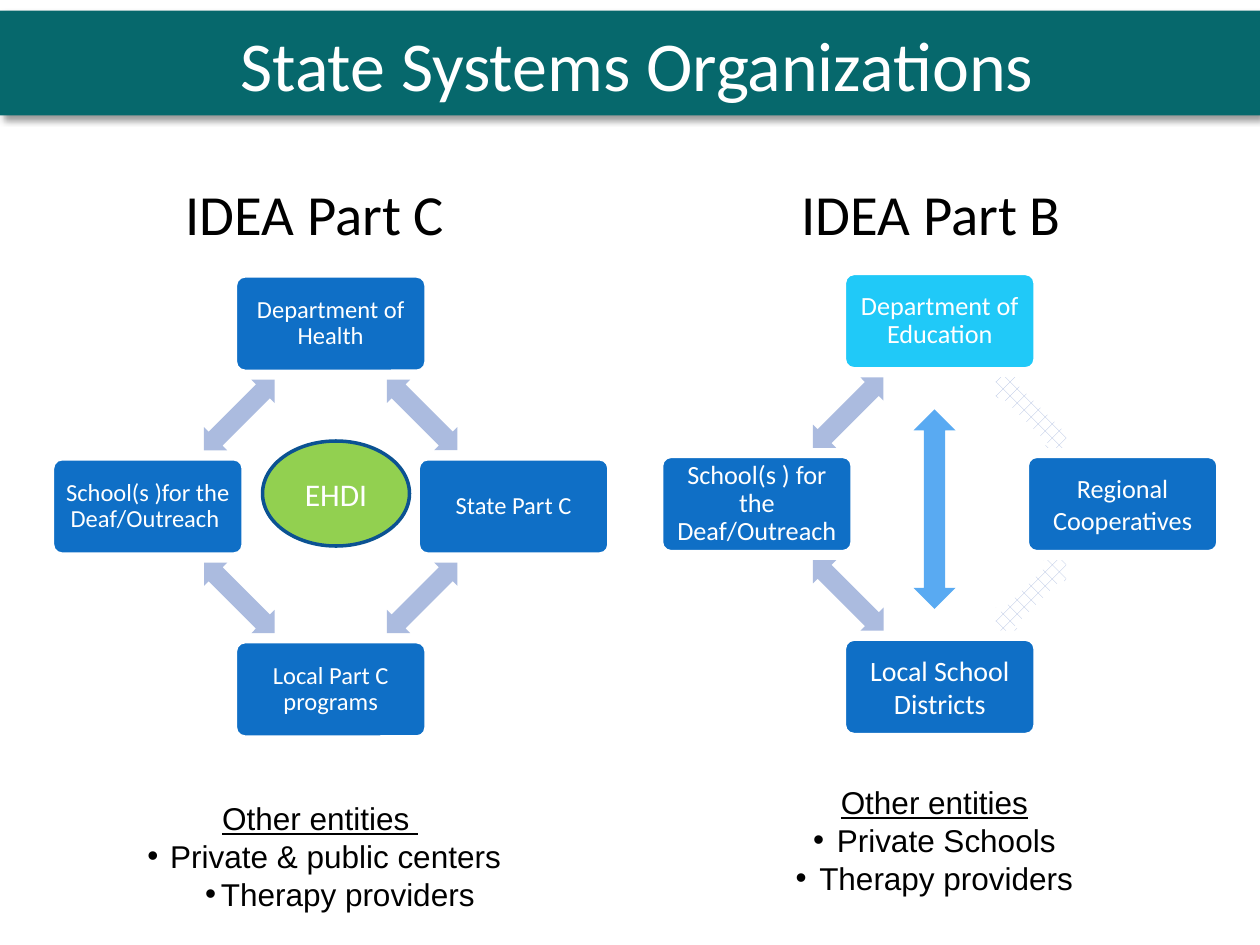
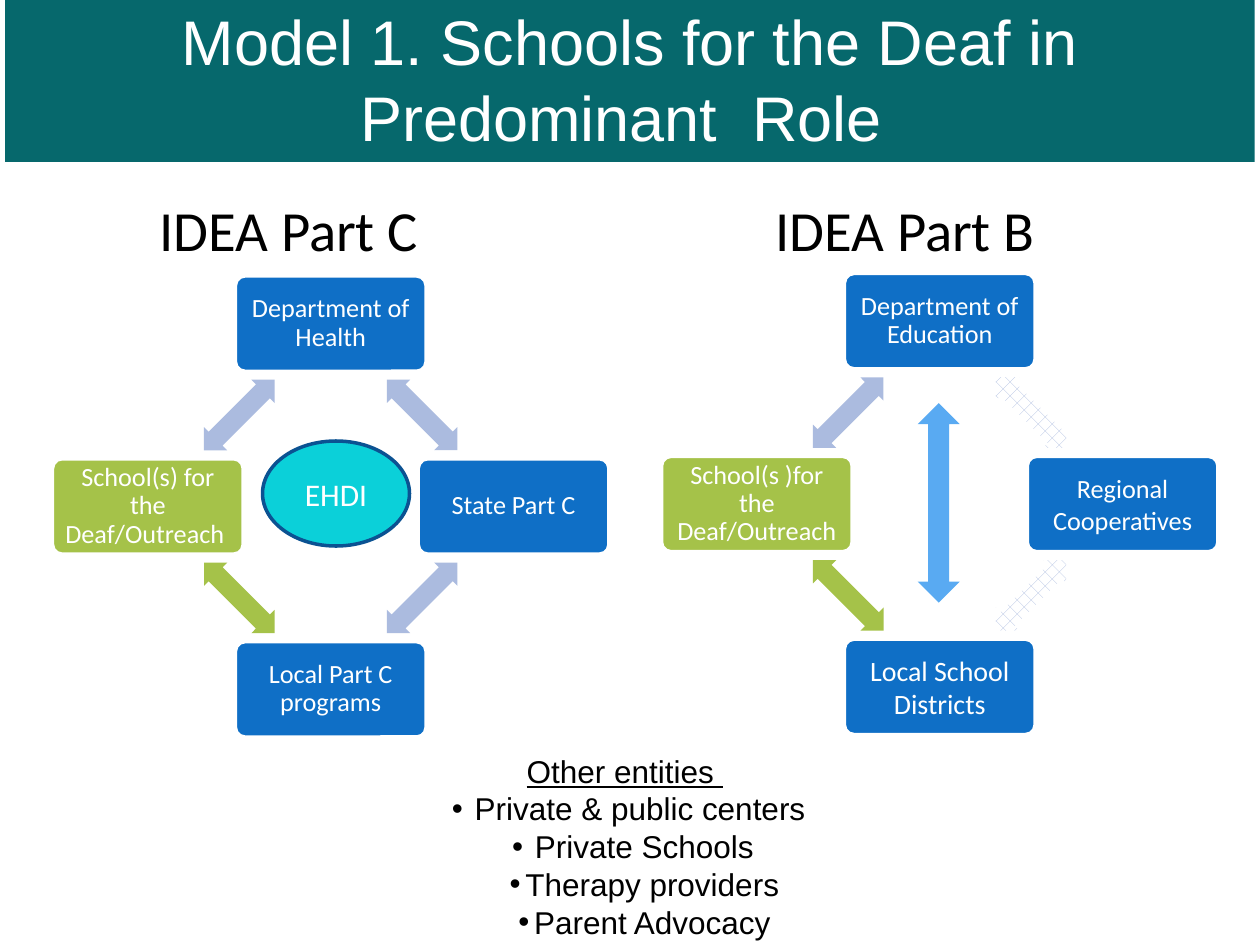
from math import cos, radians, sin, sqrt

from lxml import etree
from pptx import Presentation
from pptx.dml.color import RGBColor
from pptx.enum.dml import MSO_PATTERN
from pptx.enum.shapes import MSO_SHAPE
from pptx.enum.text import MSO_ANCHOR, MSO_AUTO_SIZE, PP_ALIGN
from pptx.oxml.ns import qn
from pptx.util import Pt

RECT, BOX, OVAL = MSO_SHAPE.RECTANGLE, MSO_SHAPE.ROUNDED_RECTANGLE, MSO_SHAPE.OVAL
TWO_WAY, UP_DOWN = MSO_SHAPE.LEFT_RIGHT_ARROW, MSO_SHAPE.UP_DOWN_ARROW
TOP, MIDDLE = MSO_ANCHOR.TOP, MSO_ANCHOR.MIDDLE
LEFT, CENTER = PP_ALIGN.LEFT, PP_ALIGN.CENTER
HATCH = MSO_PATTERN.PERCENT_25
NO_FIT = MSO_AUTO_SIZE.NONE

WHITE = RGBColor(0xFF, 0xFF, 0xFF)
BLACK = RGBColor(0, 0, 0)
TEAL = RGBColor(0x06, 0x68, 0x6C)
BLUE = RGBColor(0x0F, 0x6F, 0xC6)
CYAN = RGBColor(0x20, 0xC9, 0xF8)
TURQUOISE = RGBColor(0x0B, 0xD0, 0xD9)
OLIVE = RGBColor(0xA5, 0xC2, 0x49)
LIME = RGBColor(0x92, 0xD0, 0x50)
NAVY = RGBColor(0x0B, 0x52, 0x92)
SKY = RGBColor(0x59, 0xAA, 0xF2)
LAVENDER = RGBColor(0xAB, 0xBB, 0xDF)

PART_C_CENTER, PART_B_CENTER = (189, 289.4), (537, 288)
RING_RADIUS = 104.5
BOX_SIZE, ARROW_SIZE = (109, 54.5), (57, 18.8)
HEADINGS = "IDEA Part C \tIDEA Part B"
HEADING_TAB = 352

# Left margin and hanging indent of the bullet levels
EVEN, WIDE, DEEP = (13.5, 13.5), (22.5, 13), (31.5, 9)


def set_all(target, **values):
    for name, value in values.items():
        setattr(target, name, value)


class Deck:
    def __init__(self):
        self.prs = Presentation()
        set_all(self.prs, slide_width=Pt(720), slide_height=Pt(540))
        self.slide = None

    def new_slide(self, left, top, height):
        """Add a slide whose title carries both column headings."""
        self.slide = self.prs.slides.add_slide(self.prs.slide_layouts[5])
        title = self.slide.shapes.title
        set_all(title, left=Pt(left), top=Pt(top), width=Pt(570), height=Pt(height))
        tf = title.text_frame
        set_all(tf, auto_size=NO_FIT, vertical_anchor=MIDDLE, margin_left=Pt(16))
        p = tf.paragraphs[0]
        self.add_text(p, HEADINGS, 32.4, BLACK, align=LEFT)
        tabs = etree.SubElement(p._p.get_or_add_pPr(), qn("a:tabLst"))
        etree.SubElement(tabs, qn("a:tab"), pos=str(Pt(HEADING_TAB)), algn="l")

    def add_text(self, p, text, size, color=WHITE, font="Calibri", align=CENTER,
                 spacing=1.0, underline=None):
        set_all(p, alignment=align, line_spacing=spacing)
        r = p.add_run()
        r.text = text
        set_all(r.font, size=Pt(size), name=font, underline=underline)
        r.font.color.rgb = color

    def shape(self, kind, left, top, width, height, fill, line=None):
        sp = self.slide.shapes.add_shape(kind, Pt(left), Pt(top), Pt(width), Pt(height))
        sp.shadow.inherit = False
        if fill == HATCH:
            sp.fill.patterned()
            sp.fill.pattern = HATCH
            sp.fill.fore_color.rgb, sp.fill.back_color.rgb = LAVENDER, WHITE
        else:
            sp.fill.solid()
            sp.fill.fore_color.rgb = fill
        if line is None:
            sp.line.fill.background()
        else:
            sp.line.color.rgb = line
            sp.line.width = Pt(2)
        return sp

    def centered(self, kind, x, y, size, fill, line=None):
        width, height = size
        return self.shape(kind, x - width / 2, y - height / 2, width, height, fill, line)

    def band(self, text, left, top, width, height, size, font, anchor=MIDDLE, indent=7.2):
        sp = self.shape(RECT, left, top, width, height, TEAL)
        tf = sp.text_frame
        set_all(tf, word_wrap=True, vertical_anchor=anchor, margin_left=Pt(indent))
        self.add_text(tf.paragraphs[0], text, size, font=font)
        return sp

    def drop_shadow(self, sp):
        effects = sp._element.spPr.find(qn("a:effectLst"))
        shadow = etree.SubElement(effects, qn("a:outerShdw"), blurRad=str(Pt(4)),
                                  dist=str(Pt(3)), dir="2700000", rotWithShape="0")
        color = etree.SubElement(shadow, qn("a:srgbClr"), val=str(BLACK))
        etree.SubElement(color, qn("a:alpha"), val="40000")

    def box(self, x, y, text, size, fill=BLUE, spacing=0.9, inset=4.3):
        sp = self.centered(BOX, x, y, BOX_SIZE, fill, WHITE)
        sp.adjustments[0] = 0.1
        tf = sp.text_frame
        set_all(tf, word_wrap=True, vertical_anchor=MIDDLE)
        set_all(tf, **{f"margin_{side}": Pt(inset)
                       for side in ("left", "right", "top", "bottom")})
        for i, line in enumerate(text.split("\n")):
            p = tf.add_paragraph() if i else tf.paragraphs[0]
            self.add_text(p, line, size, spacing=spacing)

    def ring(self, center, boxes, arrow_fills):
        """Place four boxes clockwise from the top, each followed by a two-way arrow."""
        def around(angle, radius):
            a = radians(angle)
            return center[0] + radius * sin(a), center[1] - radius * cos(a)

        for i, (box, arrow_fill) in enumerate(zip(boxes, arrow_fills)):
            angle = 90 * i
            self.box(*around(angle, RING_RADIUS), **box)
            arrow = self.centered(TWO_WAY, *around(angle + 45, RING_RADIUS / sqrt(2)),
                                  ARROW_SIZE, arrow_fill)
            arrow.rotation = angle + 45
            arrow.adjustments[0] = 0.6

    def part_c(self, school, size, school_fill, arrow_fill, ehdi_fill):
        boxes = [dict(text="Department of Health", size=size),
                 dict(text="State Part C", size=size),
                 dict(text="Local Part C programs", size=size),
                 dict(text=school, size=size, fill=school_fill)]
        self.ring(PART_C_CENTER, boxes, [LAVENDER, LAVENDER, arrow_fill, LAVENDER])
        oval = self.shape(OVAL, 150, 252, 84, 60, ehdi_fill, NAVY)
        oval.text_frame.vertical_anchor = MIDDLE
        self.add_text(oval.text_frame.paragraphs[0], "EHDI", 18)

    def part_b(self, school, education_fill, school_fill, arrow_fill, link_at):
        boxes = [dict(text="Department of Education", size=15, fill=education_fill),
                 dict(text="Regional\nCooperatives", size=15, spacing=1.0, inset=3),
                 dict(text="Local School Districts", size=16, spacing=1.0, inset=5),
                 dict(text=school, size=15, fill=school_fill)]
        self.ring(PART_B_CENTER, boxes, [HATCH, HATCH, arrow_fill, LAVENDER])
        self.shape(UP_DOWN, *link_at, 24, 114, SKY)

    def entities(self, left, top, width, height, heading, items):
        tb = self.slide.shapes.add_textbox(Pt(left), Pt(top), Pt(width), Pt(height))
        tf = tb.text_frame
        tf.word_wrap = True
        self.add_text(tf.paragraphs[0], heading, 18, BLACK, "Arial", underline=True)
        for text, (margin, hanging) in items:
            p = tf.add_paragraph()
            self.add_text(p, text, 18, BLACK, "Arial")
            pPr = p._p.get_or_add_pPr()
            pPr.set("marL", str(Pt(margin)))
            pPr.set("indent", str(-Pt(hanging)))
            etree.SubElement(pPr, qn("a:buFont"), typeface="Arial")
            etree.SubElement(pPr, qn("a:buChar"), char="•")


def state_systems(deck):
    deck.new_slide(90, 97.5, 48)
    deck.part_c("School(s )for the Deaf/Outreach ", 14, BLUE, LAVENDER, LIME)
    deck.part_b("School(s ) for the Deaf/Outreach", CYAN, BLUE, LAVENDER, (522, 234))
    deck.entities(444, 444, 180, 72.7, "Other entities",
                  [("Private Schools", EVEN), ("Therapy providers", EVEN)])
    deck.entities(60, 453, 246, 72.7, "Other entities ",
                  [("Private & public centers ", WIDE), ("Therapy providers", DEEP)])
    band = deck.band("State Systems Organizations", 0, 6, 720, 60, 40, "Calibri", indent=15)
    deck.drop_shadow(band)


def schools_in_predominant_role(deck):
    deck.new_slide(75, 109.5, 42)
    deck.part_c("School(s) for the Deaf/Outreach ", 15, OLIVE, OLIVE, TURQUOISE)
    deck.part_b("School(s )for the Deaf/Outreach", BLUE, OLIVE, OLIVE, (524.4, 230.4))
    deck.entities(234, 426, 246, 116.6, "Other entities ",
                  [("Private & public centers ", WIDE), ("Private Schools", WIDE),
                   ("Therapy providers", DEEP), ("Parent Advocacy", DEEP)])
    deck.band("Model 1. Schools for the Deaf in Predominant  Role ",
              3, -2, 714, 94.5, 36, "Arial", TOP)


def main():
    deck = Deck()
    state_systems(deck)
    schools_in_predominant_role(deck)
    deck.prs.save("out.pptx")


if __name__ == "__main__":
    main()
